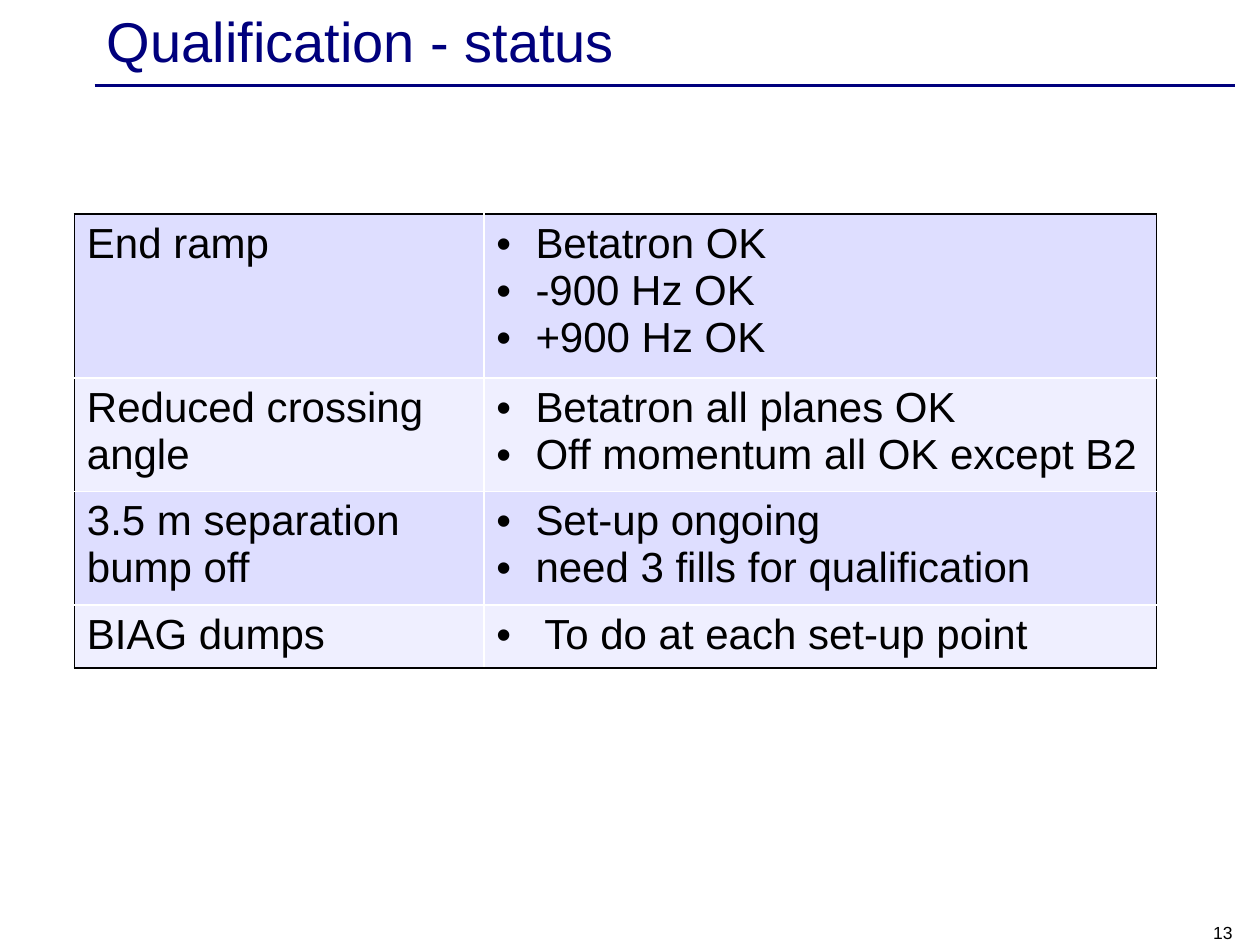
from pptx import Presentation
from pptx.dml.color import RGBColor as Color
from pptx.enum.shapes import MSO_CONNECTOR as Connector
from pptx.enum.text import MSO_ANCHOR as Anchor, PP_ALIGN as Align
from pptx.oxml import parse_xml
from pptx.oxml.ns import nsdecls
from pptx.util import Inches, Pt

COLORS = {
    "navy": "00007D",
    "black": "000000",
    "white": "FFFFFF",
    "band_dark": "DEDEFF",
    "band_light": "EFEFFF",
}
FONT = "Arial"
STATUS_ROWS = [
    ("End ramp", ["Betatron OK", "-900 Hz OK", "+900 Hz OK"], 0.31),
    ("Reduced crossing angle", ["Betatron all planes OK", "Off momentum all OK except B2"], 0.31),
    ("3.5 m separation bump off", ["Set-up ongoing", "need 3 fills for qualification"], 0.31),
    ("BIAG dumps", ["To do at each set-up point"], 0.38),
]
COLUMN_WIDTHS = [3.25, 5.34]
LINE_HEIGHT = 0.37
CELL_PADDING = 0.1


class StatusSlide:
    """Holds the style and the current slide, and adds its elements."""

    def __init__(self, presentation):
        self.slide = presentation.slides.add_slide(presentation.slide_layouts[6])

    def color(self, name):
        return Color.from_string(COLORS[name])

    def format_paragraph(self, paragraph, size, color, align=Align.LEFT):
        paragraph.alignment = align
        for run in paragraph.runs:
            run.font.name = FONT
            run.font.size = Pt(size)
            run.font.color.rgb = self.color(color)

    def add_rule(self, left, right, top):
        rule = self.slide.shapes.add_connector(
            Connector.STRAIGHT, Inches(left), Inches(top), Inches(right), Inches(top))
        rule.line.color.rgb = self.color("navy")
        rule.line.width = Pt(2)
        rule._element.spPr.append(parse_xml(f"<a:effectLst {nsdecls('a')}/>"))

    def add_text(self, text, box, size, color, anchor, align=Align.LEFT):
        shape = self.slide.shapes.add_textbox(*map(Inches, box))
        text_frame = shape.text_frame
        text_frame.word_wrap = True
        text_frame.vertical_anchor = anchor
        text_frame.text = text
        self.format_paragraph(text_frame.paragraphs[0], size, color, align)

    def add_bullet(self, paragraph, indent):
        properties = paragraph._p.get_or_add_pPr()
        properties.set("marL", str(Inches(indent)))
        properties.set("indent", str(-Inches(indent)))
        properties.append(parse_xml(f'<a:buFont {nsdecls("a")} typeface="{FONT}"/>'))
        properties.append(parse_xml(f'<a:buChar {nsdecls("a")} char="•"/>'))

    def add_borders(self, cell, outer_sides):
        properties = cell._tc.get_or_add_tcPr()
        for side in "LRTB":
            color = COLORS["black" if side in outer_sides else "white"]
            properties.append(parse_xml(
                f'<a:ln{side} {nsdecls("a")} w="{Pt(1)}"><a:solidFill>'
                f'<a:srgbClr val="{color}"/></a:solidFill></a:ln{side}>'))

    def fill_cell(self, cell, lines, band, outer_sides, indent=None):
        self.add_borders(cell, outer_sides)
        cell.fill.solid()
        cell.fill.fore_color.rgb = self.color(band)
        cell.text_frame.text = "\n".join(lines)
        for paragraph in cell.text_frame.paragraphs:
            if indent:
                self.add_bullet(paragraph, indent)
            self.format_paragraph(paragraph, 24, "black")

    def add_status_table(self, rows, left, top):
        line_counts = [max(len(items), 1 + (len(label) > 18)) for label, items, _ in rows]
        heights = [count * LINE_HEIGHT + CELL_PADDING for count in line_counts]
        table = self.slide.shapes.add_table(
            len(rows), len(COLUMN_WIDTHS), Inches(left), Inches(top),
            Inches(sum(COLUMN_WIDTHS)), Inches(sum(heights))).table
        table.first_row = False
        for column, width in zip(table.columns, COLUMN_WIDTHS):
            column.width = Inches(width)
        for index, (label, items, indent) in enumerate(rows):
            table.rows[index].height = Inches(heights[index])
            band = "band_light" if index % 2 else "band_dark"
            edge = "T" if index == 0 else "B" if index == len(rows) - 1 else ""
            self.fill_cell(table.cell(index, 0), [label], band, "L" + edge)
            self.fill_cell(table.cell(index, 1), items, band, "R" + edge, indent)


def main():
    presentation = Presentation()
    presentation.slide_width = Inches(10)
    presentation.slide_height = Inches(7.5)
    status = StatusSlide(presentation)
    status.add_rule(0.75, 9.8, 0.68)
    status.add_text("Qualification - status", (0.75, 0.03, 9, 0.57), 32, "navy", Anchor.MIDDLE)
    status.add_text("13", (7.55, 7.25, 2.33, 0.28), 10, "black", Anchor.BOTTOM, Align.RIGHT)
    status.add_status_table(STATUS_ROWS, 0.59, 1.7)
    presentation.save("out.pptx")


if __name__ == "__main__":
    main()
